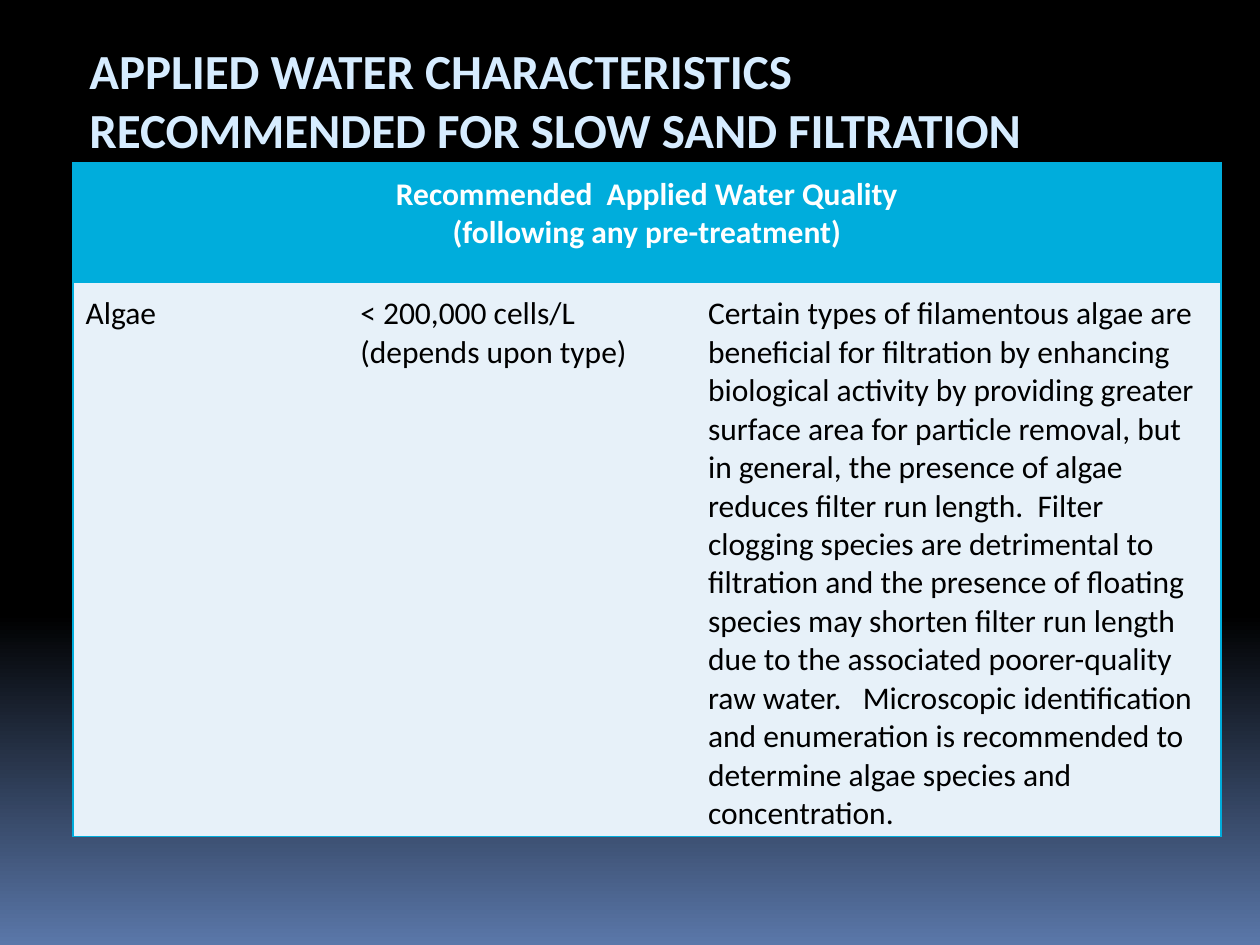
from lxml import etree
from pptx import Presentation
from pptx.dml.color import RGBColor
from pptx.enum import text
from pptx.oxml import ns
from pptx.util import Inches, Pt

TITLE = ["APPLIED WATER CHARACTERISTICS", "RECOMMENDED FOR SLOW SAND FILTRATION"]
HEADER = ["Recommended  Applied Water Quality", "(following any pre-treatment)"]
ALGAE = [
    "Algae",
    "< 200,000 cells/L (depends upon type)",
    "Certain types of filamentous algae are beneficial for filtration by enhancing "
    "biological activity by providing greater surface area for particle removal, but "
    "in general, the presence of algae reduces filter run length.  Filter clogging "
    "species are detrimental to filtration and the presence of floating species may "
    "shorten filter run length due to the associated poorer-quality raw water.   "
    "Microscopic identification and enumeration is recommended to determine algae "
    "species and concentration.",
]
COLUMNS = [2.18, 2.76, 4.17]
ROWS = [0.95, 4.4]
BLUE, PALE = "00ADDC", "E7F1F9"
LEFT, CENTER = text.PP_ALIGN.LEFT, text.PP_ALIGN.CENTER
TITLE_FONT = {"name": "Calibri", "size": Pt(28), "bold": True}
HEADER_FONT = {"name": "Calibri", "size": Pt(18), "bold": True}
BODY_FONT = {**HEADER_FONT, "bold": False}
CELL_MARGINS = {
    "margin_left": Inches(0.1),
    "margin_right": Inches(0.1),
    "margin_top": Inches(0.1),
    "margin_bottom": Inches(0.02),
}


def color(value):
    return RGBColor.from_string(value)


def apply(target, values):
    for name, value in values.items():
        setattr(target, name, value)


def write(frame, lines, font, ink, align):
    frame.text = "\n".join(lines)
    for para in frame.paragraphs:
        para.alignment = align
        for span in para.runs:
            apply(span.font, font)
            span.font.color.rgb = color(ink)


def style_cell(cell, fill, sides):
    apply(cell, CELL_MARGINS)
    properties = cell._tc.get_or_add_tcPr()
    for side in "LRTB":
        line = etree.SubElement(properties, ns.qn(f"a:ln{side}"), w=str(Pt(1)))
        if side in sides:
            solid = etree.SubElement(line, ns.qn("a:solidFill"))
            etree.SubElement(solid, ns.qn("a:srgbClr"), val=BLUE)
        else:
            etree.SubElement(line, ns.qn("a:noFill"))
    cell.fill.solid()
    cell.fill.fore_color.rgb = color(fill)


def main():
    deck = Presentation()
    deck.slide_width, deck.slide_height = Inches(10), Inches(7.5)
    page = deck.slides.add_slide(deck.slide_layouts[5])

    backdrop = page.background.fill
    backdrop.gradient()
    backdrop.gradient_angle = 270
    stops = [(0.65, "000000"), (1, "5A77A9")]
    for stop, (position, shade) in zip(backdrop.gradient_stops, stops):
        stop.position = position
        stop.color.rgb = color(shade)

    title = page.shapes.title
    apply(title, {"left": Inches(0.61), "top": Inches(0.27),
                  "width": Inches(8.38), "height": Inches(1.04)})
    write(title.text_frame, TITLE, TITLE_FONT, "D6ECFF", LEFT)
    apply(title.text_frame, {"word_wrap": True,
                             "auto_size": text.MSO_AUTO_SIZE.NONE,
                             "vertical_anchor": text.MSO_ANCHOR.MIDDLE})

    table = page.shapes.add_table(
        len(ROWS), len(COLUMNS), Inches(0.58), Inches(1.29),
        Inches(sum(COLUMNS)), Inches(sum(ROWS))).table
    for column, width in zip(table.columns, COLUMNS):
        column.width = Inches(width)
    for row, height in zip(table.rows, ROWS):
        row.height = Inches(height)

    table.cell(0, 0).merge(table.cell(0, len(COLUMNS) - 1))
    write(table.cell(0, 0).text_frame, HEADER, HEADER_FONT, "FFFFFF", CENTER)
    for index, (words, sides) in enumerate(zip(ALGAE, ["LTB", "TB", "RTB"])):
        style_cell(table.cell(0, index), BLUE, "LRTB")
        style_cell(table.cell(1, index), PALE, sides)
        write(table.cell(1, index).text_frame, [words], BODY_FONT, "000000", LEFT)

    deck.save("out.pptx")


if __name__ == "__main__":
    main()
